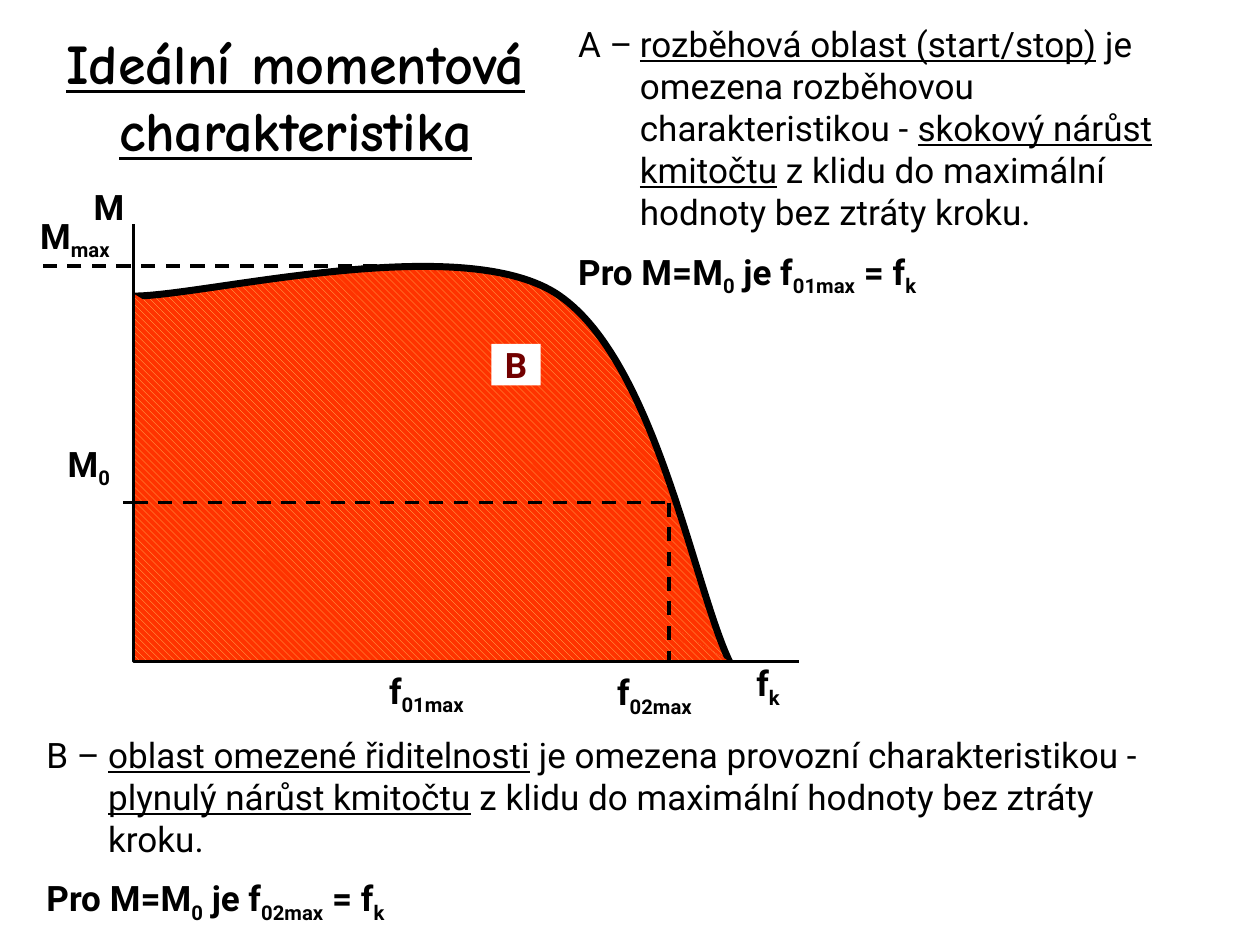
from lxml import etree
from pptx import Presentation
from pptx.dml.color import RGBColor
from pptx.enum.dml import MSO_LINE, MSO_PATTERN
from pptx.enum.shapes import MSO_CONNECTOR, MSO_SHAPE
from pptx.enum.text import MSO_ANCHOR, PP_ALIGN
from pptx.oxml.ns import qn
from pptx.util import Inches, Pt

BLACK = RGBColor(0x00, 0x00, 0x00)
WHITE = RGBColor(0xFF, 0xFF, 0xFF)
DARK_RED = RGBColor(0x72, 0x00, 0x00)
RED = RGBColor(0xFF, 0x33, 0x00)
SAND = RGBColor(0xFF, 0xCC, 0x66)
DASH = MSO_LINE.DASH
HATCH = MSO_PATTERN.WIDE_DOWNWARD_DIAGONAL
STRAIGHT = MSO_CONNECTOR.STRAIGHT
RECT, TRIANGLE = MSO_SHAPE.RECTANGLE, MSO_SHAPE.RIGHT_TRIANGLE
CENTER, LEFT = PP_ALIGN.CENTER, PP_ALIGN.LEFT
MIDDLE, TOP = MSO_ANCHOR.MIDDLE, MSO_ANCHOR.TOP

TITLE = "Ideální momentová charakteristika"
AXIS_X, AXIS_Y = 1.06, 5.25
M_MAX, M_0, F_02 = 2.11, 3.99, 5.31
CURVE_TOP, CURVE_END = 2.33, 5.79
LABEL_H, INDENT = 0.33, 0.49

CURVE = [(AXIS_X, 2.35), (1.62, 2.35), (3.61, 1.84), (4.4, 2.32),
         (5.19, 2.81), (5.5, 4.64), (CURVE_END, AXIS_Y)]
AXES = [(AXIS_X, 1.78), (AXIS_X, AXIS_Y), (6.34, AXIS_Y)]
LEVELS = [(3.58, M_MAX, 0.27, M_MAX), (0.98, M_0, 3.43, M_0)]
GUIDES = [(AXIS_X, M_0, F_02, M_0), (F_02, M_0, F_02, AXIS_Y)]
LABELS = [
    (0.67, 1.47, 0.39, "M", ""),
    (0.2, 1.7, 0.79, "M", "max"),
    (0.43, 3.51, 0.55, "M", "0"),
    (2.95, 5.31, 0.87, "f", "01max"),
    (4.76, 5.32, 0.87, "f", "02max"),
    (5.94, 5.25, 0.31, "f", "k"),
]
NOTES = [
    ((4.49, 0.13, 5.39, 1.93), "01max", [
        ("A –\t", ""), ("rozběhová oblast (start/stop)", "u"),
        (" je omezena rozběhovou charakteristikou - ", ""),
        ("skokový nárůst kmitočtu", "u"),
        (" z klidu do maximální hodnoty bez ztráty kroku.", "")]),
    ((0.27, 5.77, 9.21, 1.6), "02max", [
        ("B –\t", ""), ("oblast omezené řiditelnosti", "u"),
        (" je omezena provozní charakteristikou - ", ""),
        ("plynulý nárůst kmitočtu", "u"),
        (" z klidu do maximální hodnoty bez ztráty kroku.", "")]),
]


def inches(values):
    return [Inches(v) for v in values]


def add_runs(p, runs, color=BLACK):
    """Add runs styled by flags: b bold, u underline, s subscript."""
    for text, flags in runs:
        r = p.add_run()
        r.text = text
        r.font.name, r.font.size = "Roboto", Pt(20)
        r.font.bold, r.font.color.rgb = "b" in flags, color
        if "u" in flags:
            r.font.underline = True
        if "s" in flags:
            r.font._element.set("baseline", "-25000")


def add_label(s, x, y, w, runs, color=BLACK, fill=None):
    """Add a centred bold label, optionally on a filled box."""
    box = inches((x, y, w, LABEL_H))
    if fill is None:
        sp = s.shapes.add_textbox(*box)
    else:
        sp = s.shapes.add_shape(RECT, *box)
        sp.shadow.inherit = False
        sp.fill.solid()
        sp.fill.fore_color.rgb = fill
        sp.line.fill.background()
    tf = sp.text_frame
    tf.word_wrap, tf.vertical_anchor = True, TOP
    tf.margin_left = tf.margin_right = tf.margin_top = tf.margin_bottom = 0
    tf.paragraphs[0].alignment = CENTER
    add_runs(tf.paragraphs[0], runs, color)


def add_note(s, box, limit, sentence):
    """Add a hanging-indent explanation followed by its condition."""
    tf = s.shapes.add_textbox(*inches(box)).text_frame
    tf.word_wrap = True
    condition = [("Pro M=M", "b"), ("0", "bs"), (" je f", "b"), (limit, "bs"),
                 (" = f", "b"), ("k", "bs")]
    first, second = tf.paragraphs[0], tf.add_paragraph()
    second.space_before = Pt(10)
    for p, runs in ((first, sentence), (second, condition)):
        p.alignment = LEFT
        pPr = p._p.get_or_add_pPr()
        pPr.set("marL", str(Inches(INDENT)))
        pPr.set("indent", str(-Inches(INDENT)))
        add_runs(p, runs)


def add_dashed(s, ends):
    """Add a dashed guide line."""
    line = s.shapes.add_connector(STRAIGHT, *inches(ends))
    line.line.color.rgb, line.line.width = BLACK, Pt(2)
    line.line.dash_style = DASH
    etree.SubElement(line._element.spPr, qn("a:effectLst"))


def add_outline(shapes, points, width):
    """Add an open black outline through the points."""
    start, *rest = [tuple(inches(pt)) for pt in points]
    builder = shapes.build_freeform(*start)
    builder.add_line_segments(rest, close=False)
    sp = builder.convert_to_shape()
    sp.shadow.inherit = False
    sp.line.color.rgb, sp.line.width = BLACK, Pt(width)
    return sp


def bend(sp):
    """Turn every three line segments into one cubic curve."""
    segments = list(sp._element.iter(qn("a:lnTo")))
    outline = segments[0].getparent()
    for i in range(0, len(segments), 3):
        curve = etree.SubElement(outline, qn("a:cubicBezTo"))
        for segment in segments[i:i + 3]:
            curve.append(segment[0])
            outline.remove(segment)


def add_region(s):
    """Add the hatched area under the torque curve."""
    group = s.shapes.add_group_shape()
    curve = add_outline(group.shapes, CURVE, 4)
    bend(curve)
    base = group.shapes.add_shape(TRIANGLE, *inches(
        (AXIS_X, CURVE_TOP, CURVE_END - AXIS_X, AXIS_Y - CURVE_TOP)))
    base.shadow.inherit = False
    base.line.fill.background()
    for sp in (curve, base):
        sp.fill.patterned()
        sp.fill.pattern = HATCH
        sp.fill.fore_color.rgb, sp.fill.back_color.rgb = SAND, RED


def add_title(s):
    """Place and format the title placeholder."""
    sp = s.shapes.title
    sp.left, sp.top, sp.width, sp.height = inches((0.2, 0.13, 4.29, 1.26))
    tf = sp.text_frame
    tf.text = TITLE
    tf.word_wrap, tf.vertical_anchor = True, MIDDLE
    p = tf.paragraphs[0]
    p.alignment = CENTER
    font = p.runs[0].font
    font.name, font.size, font.color.rgb = "Comic Neue", Pt(32), BLACK
    font.bold = font.underline = True


def main():
    prs = Presentation()
    prs.slide_width, prs.slide_height = Inches(10), Inches(7.5)
    s = prs.slides.add_slide(prs.slide_layouts[5])
    add_title(s)
    for ends in LEVELS:
        add_dashed(s, ends)
    add_region(s)
    add_outline(s.shapes, AXES, 2).fill.background()
    for ends in GUIDES:
        add_dashed(s, ends)
    for x, y, w, symbol, index in LABELS:
        runs = [(symbol, "b")] + ([(index, "bs")] if index else [])
        add_label(s, x, y, w, runs)
    for note in NOTES:
        add_note(s, *note)
    add_label(s, 3.9, 2.73, 0.39, [("B", "b")], DARK_RED, WHITE)
    prs.save("out.pptx")


if __name__ == "__main__":
    main()
